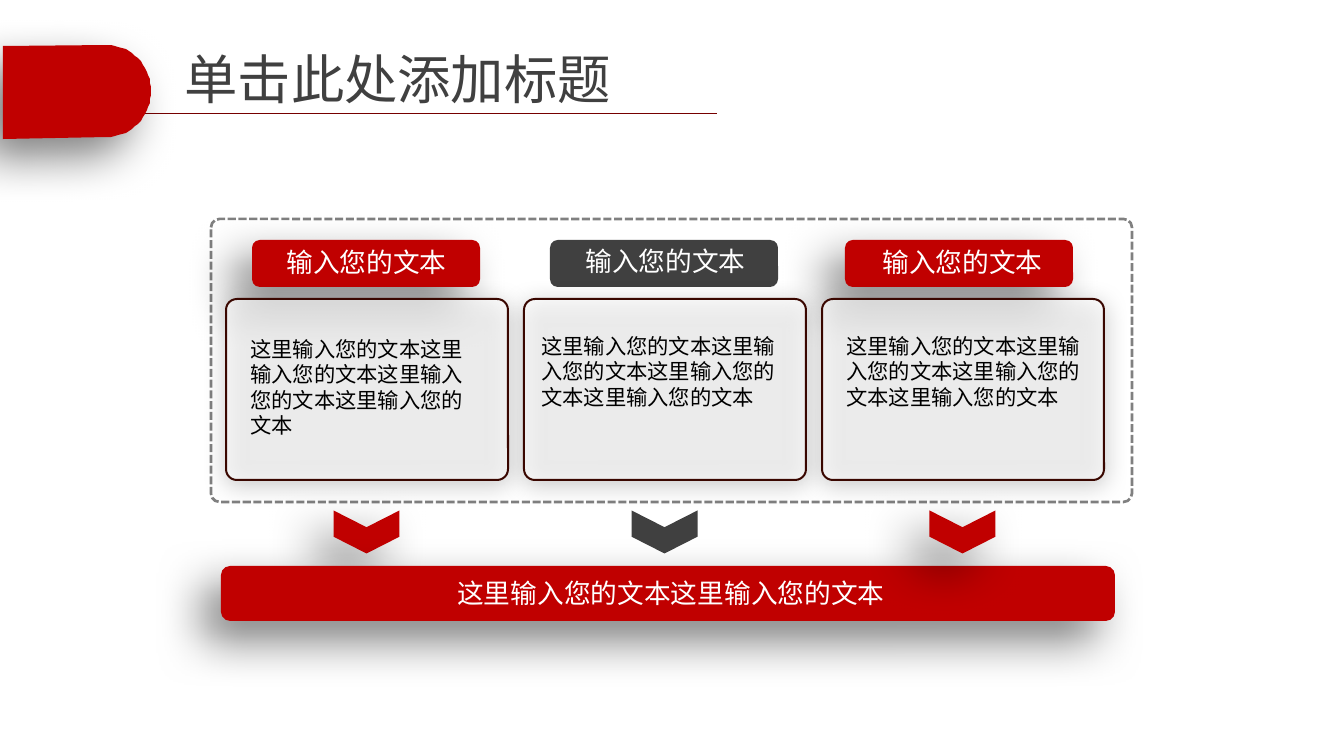
"""Build a title slide section with three panels, chevrons and a summary bar."""
import math
from dataclasses import dataclass
from typing import Optional

import lxml.etree
import pptx
import pptx.dml.color
import pptx.enum.dml
import pptx.enum.shapes
import pptx.enum.text
import pptx.oxml.ns
import pptx.util

PX = 9525
RED, GREY, WHITE, BLACK = "C00000", "404040", "FFFFFF", "000000"
FONT = "Noto Sans CJK SC"
LABEL = "输入您的文本"
SENTENCE = "这里" + LABEL
PITCH = 298
KIND = pptx.enum.shapes.MSO_SHAPE
ANCHOR = pptx.enum.text.MSO_ANCHOR
ALIGN = pptx.enum.text.PP_ALIGN


@dataclass(frozen=True)
class Box:
    left: int
    top: int
    width: int
    height: int

    def emu(self) -> tuple:
        return tuple(value * PX for value in (self.left, self.top, self.width, self.height))


@dataclass(frozen=True)
class Shadow:
    opacity: int
    blur: float
    distance: int
    angle: int


@dataclass(frozen=True)
class Column:
    color: str
    shadow: Optional[Shadow]
    tab: Box
    label: Box
    body: Box


DEEP = Shadow(50, 35, 20, 135)
SOFT = Shadow(33, 17.8, 3, 87)
COLUMNS = (
    Column(RED, DEEP, Box(252, 240, 228, 47), Box(265, 240, 203, 44), Box(241, 331, 252, 177)),
    Column(GREY, None, Box(550, 240, 228, 47), Box(564, 240, 203, 42), Box(532, 328, 264, 112)),
    Column(RED, DEEP, Box(845, 240, 228, 47), Box(861, 240, 203, 43), Box(837, 328, 254, 112)),
)


def rgb(value: str) -> pptx.dml.color.RGBColor:
    return pptx.dml.color.RGBColor.from_string(value)


def add_child(parent, tag: str, **attributes):
    child = lxml.etree.SubElement(parent, pptx.oxml.ns.qn(tag))
    for name, value in attributes.items():
        child.set(name, str(value))
    return child


def paint(shape, color: str, shadow: Optional[Shadow] = None) -> None:
    shape.shadow.inherit = False
    shape.fill.solid()
    shape.fill.fore_color.rgb = rgb(color)
    shape.line.fill.background()
    if shadow:
        effects = shape.element.spPr.find(pptx.oxml.ns.qn("a:effectLst"))
        outer = add_child(effects, "a:outerShdw", blurRad=int(shadow.blur * 12700),
                          dist=shadow.distance * 12700, dir=shadow.angle * 60000,
                          algn="ctr", rotWithShape=0)
        tint = add_child(outer, "a:srgbClr", val=BLACK)
        add_child(tint, "a:alpha", val=shadow.opacity * 1000)


def add_block(slide, kind, box: Box, color: str, shadow: Optional[Shadow] = None,
              adjustment: Optional[float] = None):
    shape = slide.shapes.add_shape(kind, *box.emu())
    paint(shape, color, shadow)
    if adjustment is not None:
        shape.adjustments[0] = adjustment
    return shape


def add_run(paragraph, text: str, size: int, color: str, font: str = FONT) -> None:
    run = paragraph.add_run()
    run.text = text
    run.font.size = pptx.util.Pt(size)
    run.font.name = font
    run.font.color.rgb = rgb(color)
    add_child(run.font._element, "a:ea", typeface=FONT)


def add_text(slide, box: Box, text: str, size: int, color: str, centred: bool) -> None:
    frame = slide.shapes.add_textbox(*box.emu()).text_frame
    frame.word_wrap = True
    if centred:
        frame.vertical_anchor = ANCHOR.MIDDLE
        frame.paragraphs[0].alignment = ALIGN.CENTER
    else:
        frame.auto_size = pptx.enum.text.MSO_AUTO_SIZE.SHAPE_TO_FIT_TEXT
    add_run(frame.paragraphs[0], text, size, color)


def add_header(slide) -> None:
    rule = slide.shapes.add_connector(pptx.enum.shapes.MSO_CONNECTOR.STRAIGHT,
                                      88 * PX, 114 * PX, 717 * PX, 114 * PX)
    rule.line.color.rgb = rgb("760000")
    rule.line.width = pptx.util.Pt(0.75)
    add_child(rule._element.spPr, "a:effectLst")

    angles = [math.radians(degree) for degree in range(-90, 91, 5)]
    arc = [(107 + 44 * math.cos(angle), 91 + 46 * math.sin(angle)) for angle in angles]
    builder = slide.shapes.build_freeform(3, 46, scale=PX)
    builder.add_line_segments(arc + [(3, 139)], close=True)
    paint(builder.convert_to_shape(), RED, DEEP)

    title = slide.shapes.title
    title.left, title.top, title.width, title.height = Box(173, 31, 909, 95).emu()
    frame = title.text_frame
    frame.margin_left = frame.margin_right = pptx.util.Inches(0.12)
    frame.margin_top = frame.margin_bottom = pptx.util.Inches(0.06)
    frame.vertical_anchor = ANCHOR.MIDDLE
    frame.paragraphs[0].alignment = ALIGN.LEFT
    add_run(frame.paragraphs[0], "单击此处添加标题", 40, GREY, "Arial")


def add_frame(slide) -> None:
    shape = add_block(slide, KIND.ROUNDED_RECTANGLE, Box(211, 219, 921, 283), WHITE,
                      adjustment=0.03)
    shape.fill.background()
    shape.line.color.rgb = rgb("808080")
    shape.line.width = pptx.util.Pt(2)
    shape.line.dash_style = pptx.enum.dml.MSO_LINE.SQUARE_DOT
    shape.line._ln.find(pptx.oxml.ns.qn("a:prstDash")).set("val", "sysDash")


def add_panel(slide, index: int) -> None:
    shape = add_block(slide, KIND.ROUNDED_RECTANGLE, Box(226 + index * PITCH, 299, 282, 181),
                      WHITE, SOFT, 0.06)
    tint = shape.element.spPr.find(pptx.oxml.ns.qn("a:solidFill"))[0]
    add_child(tint, "a:alpha", val=60000)
    shape.line.color.rgb = rgb("3A0700")
    shape.line.width = pptx.util.Pt(1.5)
    add_text(slide, COLUMNS[index].body, SENTENCE * 4, 16, BLACK, False)


def add_chevron(slide, index: int) -> None:
    column = COLUMNS[index]
    shape = add_block(slide, KIND.CHEVRON, Box(345 + index * PITCH, 499, 43, 66),
                      column.color, column.shadow, 0.39)
    shape.rotation = 90


def main() -> None:
    presentation = pptx.Presentation()
    presentation.slide_width = 1344 * PX
    presentation.slide_height = 756 * PX
    slide = presentation.slides.add_slide(presentation.slide_layouts[5])
    add_header(slide)
    add_frame(slide)
    for column in COLUMNS:
        add_block(slide, KIND.ROUNDED_RECTANGLE, column.tab, column.color, column.shadow)
        add_text(slide, column.label, LABEL, 20, WHITE, True)
    for index in range(len(COLUMNS)):
        add_panel(slide, index)
    add_chevron(slide, 0)
    add_block(slide, KIND.ROUNDED_RECTANGLE, Box(221, 566, 894, 55), RED, DEEP)
    add_text(slide, Box(399, 573, 544, 40), SENTENCE * 2, 20, WHITE, True)
    for index in (1, 2):
        add_chevron(slide, index)
    presentation.save("out.pptx")


if __name__ == "__main__":
    main()
